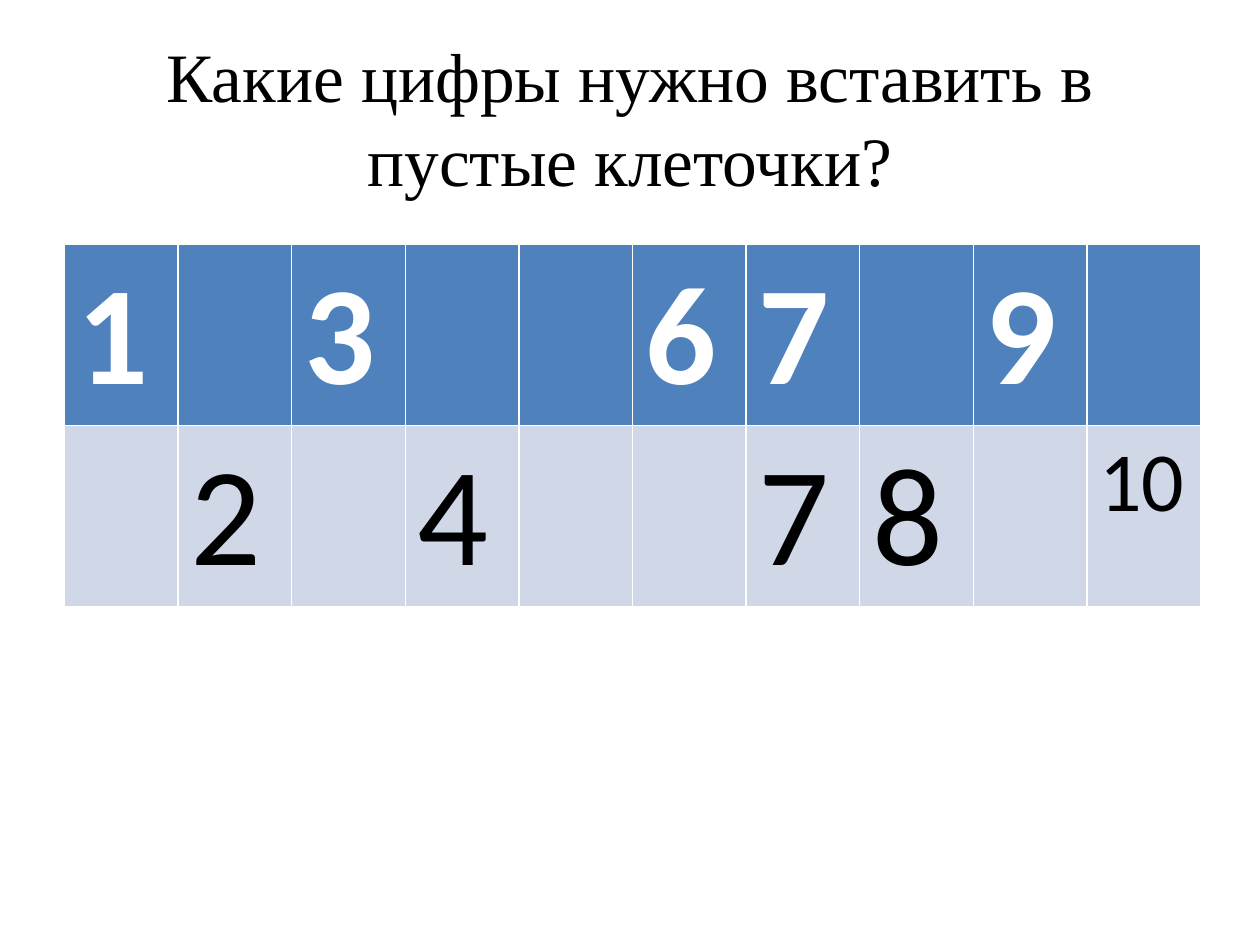
"""Build a slide with a number-row puzzle: which digits fill the empty cells."""
from pptx import Presentation
from pptx.dml.color import RGBColor
from pptx.enum.text import MSO_ANCHOR, PP_ALIGN
from pptx.util import Cm, Pt

QUESTION = "Какие цифры нужно вставить в пустые клеточки?"
NUMBER_ROWS = [
    ["1", "", "3", "", "", "6", "7", "", "9", ""],
    ["", "2", "", "4", "", "", "7", "8", "", "10"],
]
ROW_FILLS = ["4F81BD", "D0D8E8"]
QUESTION_FONT = {"name": "Times New Roman", "size": Pt(39.6), "bold": False}
ROW_FONTS = [
    {"name": "Calibri", "size": Pt(80), "bold": True},
    {"name": "Calibri", "size": Pt(80), "bold": False},
]
ROW_INKS = ["FFFFFF", "000000"]
TWO_DIGIT_SIZE = Pt(48)
QUESTION_FRAME = {
    "word_wrap": True,
    "vertical_anchor": MSO_ANCHOR.MIDDLE,
    "text": QUESTION,
}
QUESTION_PARAGRAPH = {"alignment": PP_ALIGN.CENTER, "line_spacing": Pt(48)}
COLUMN_WIDTH = Cm(2.29)
ROW_HEIGHT = Cm(3.65)


def assign(target, values):
    """Set each named attribute on the target."""
    for name, value in values.items():
        setattr(target, name, value)


def paint(color, code):
    """Give a colour format its hex colour."""
    color.rgb = RGBColor.from_string(code)


def add_question(slide):
    """Place the centred question at the top."""
    question = slide.shapes.add_textbox(Cm(1.27), Cm(0.76), Cm(22.86), Cm(3.18))
    assign(question.text_frame, QUESTION_FRAME)
    paragraph = question.text_frame.paragraphs[0]
    assign(paragraph, QUESTION_PARAGRAPH)
    font = paragraph.runs[0].font
    assign(font, QUESTION_FONT)
    paint(font.color, "000000")


def add_number_grid(slide):
    """Place the two rows of numbers with their gaps."""
    row_count, column_count = len(NUMBER_ROWS), len(NUMBER_ROWS[0])
    grid = slide.shapes.add_table(
        row_count, column_count, Cm(1.3), Cm(4.93),
        COLUMN_WIDTH * column_count, ROW_HEIGHT * row_count,
    ).table
    for row, numbers, fill, ink, row_font in zip(
        grid.rows, NUMBER_ROWS, ROW_FILLS, ROW_INKS, ROW_FONTS
    ):
        for cell, number in zip(row.cells, numbers):
            cell.fill.solid()
            paint(cell.fill.fore_color, fill)
            if number:
                cell.text = number
                font = cell.text_frame.paragraphs[0].runs[0].font
                assign(font, row_font)
                paint(font.color, ink)
                if len(number) > 1:
                    font.size = TWO_DIGIT_SIZE


def main():
    """Create the slide and save it."""
    deck = Presentation()
    assign(deck, {"slide_width": Cm(25.4), "slide_height": Cm(19.05)})
    slide = deck.slides.add_slide(deck.slide_layouts[6])
    add_question(slide)
    add_number_grid(slide)
    deck.save("out.pptx")


if __name__ == "__main__":
    main()
